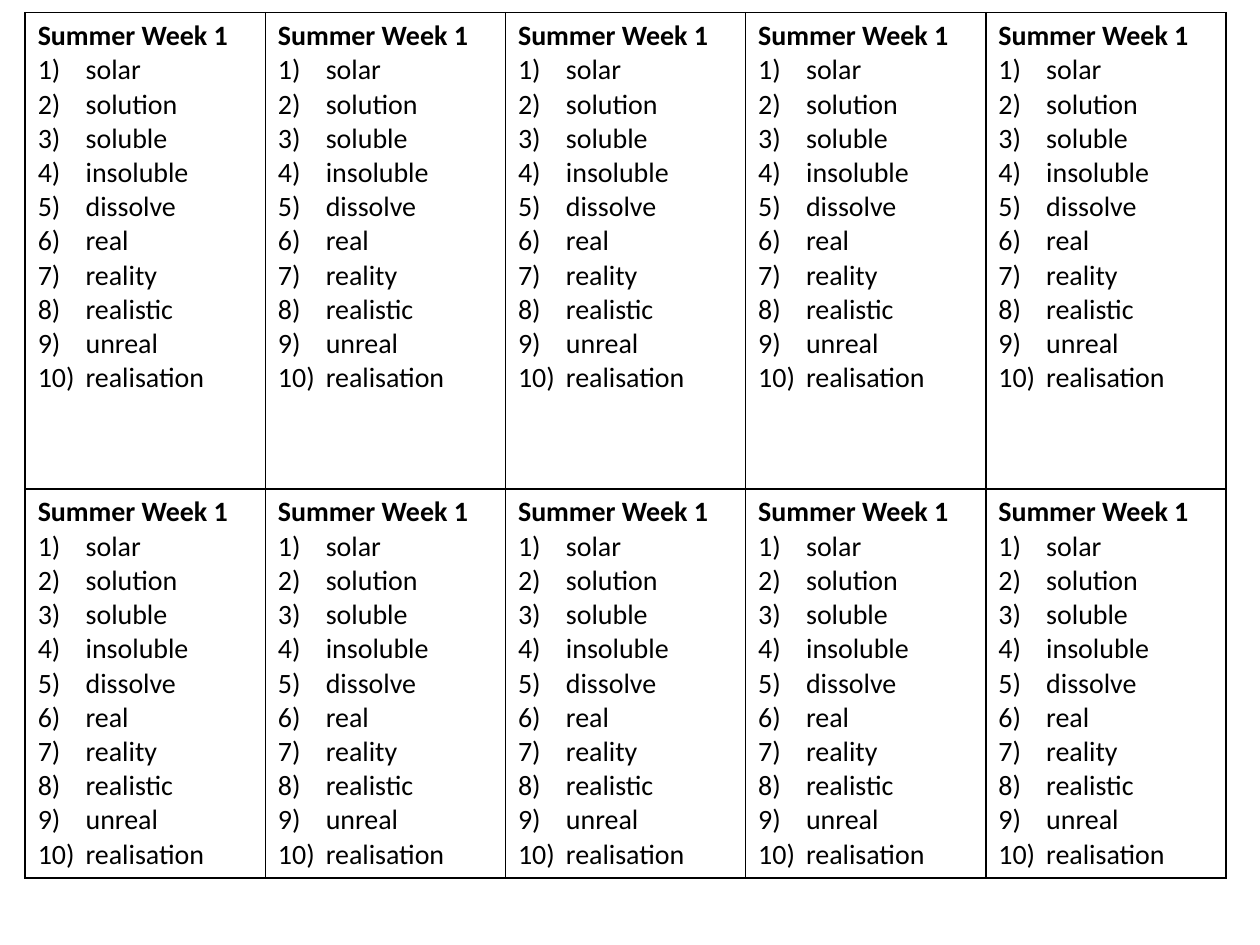
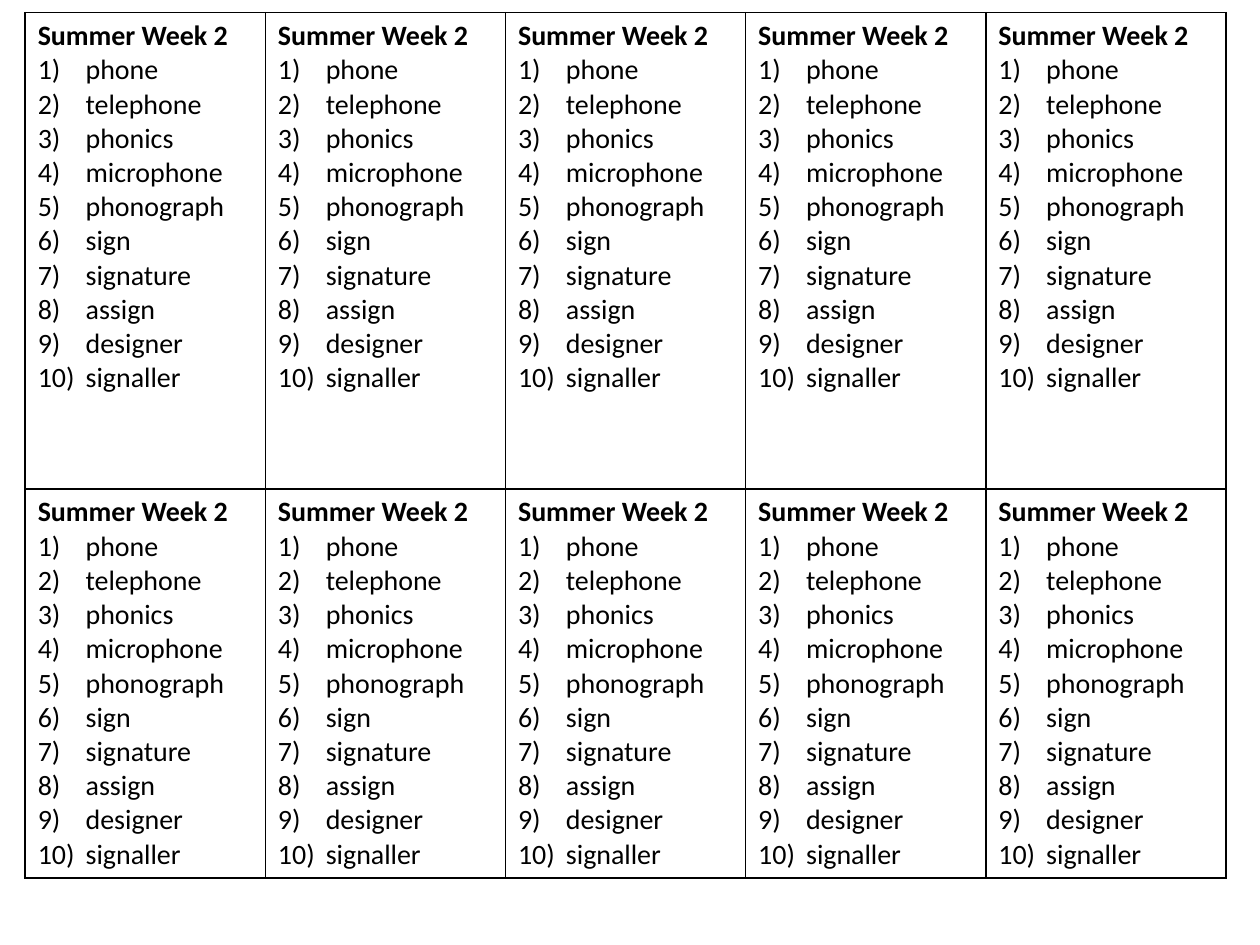
from lxml import etree
from pptx import Presentation
from pptx import util as u
from pptx.dml.color import RGBColor
from pptx.oxml.ns import qn

INK = "000000"
FONT = "Calibri"
SIZE = 16
COLS = 5
ROWS = (3.78, 3.03)
BOX = (0.2, 0.1, 9.53, sum(ROWS))
HANG = u.Inches(0.38)
WEEKS = {
    "Summer Week 1": ["solar", "solution", "soluble", "insoluble", "dissolve",
                      "real", "reality", "realistic", "unreal", "realisation"],
    "Summer Week 2": ["phone", "telephone", "phonics", "microphone", "phonograph",
                      "sign", "signature", "assign", "designer", "signaller"],
}


def tint(code):
    """Turn a hex string into a colour."""
    return RGBColor.from_string(code)


def number(para):
    """Give a paragraph an automatic number and a hanging indent."""
    props = para._p.get_or_add_pPr()
    props.set("marL", str(HANG))
    props.set("indent", str(-HANG))
    etree.SubElement(props, qn("a:buFont"), typeface="+mj-lt")
    etree.SubElement(props, qn("a:buAutoNum"), type="arabicParenR")


def frame(cell):
    """Draw a thin line on all four sides of a cell and clear its fill."""
    props = cell._tc.get_or_add_tcPr()
    for side in "LRTB":
        line = etree.SubElement(props, qn(f"a:ln{side}"), w=str(u.Pt(1)))
        fill = etree.SubElement(line, qn("a:solidFill"))
        etree.SubElement(fill, qn("a:srgbClr"), val=INK)
    cell.fill.background()


def card(cell, week, words):
    """Fill a cell with a bold heading and a numbered word list."""
    cell.text_frame.text = "\n".join([week, *words])
    for i, para in enumerate(cell.text_frame.paragraphs):
        if i:
            number(para)
        font = para.runs[0].font
        font.name, font.size, font.bold = FONT, u.Pt(SIZE), i == 0
        font.color.rgb = tint(INK)
    frame(cell)


def sheet(slide, box, week, words):
    """Place a grid of equal word cards in the given box."""
    table = slide.shapes.add_table(len(ROWS), COLS, *map(u.Inches, box)).table
    table.first_row = table.horz_banding = False
    for col in table.columns:
        col.width = u.Inches(box[2] / COLS)
    for row, high in zip(table.rows, ROWS):
        row.height = u.Inches(high)
    for cell in table.iter_cells():
        card(cell, week, words)


def main():
    """Build one sheet of cards for each week."""
    deck = Presentation()
    deck.slide_width, deck.slide_height = u.Inches(10), u.Inches(7.5)
    for week, words in WEEKS.items():
        slide = deck.slides.add_slide(deck.slide_layouts[6])
        sheet(slide, BOX, week, words)
    deck.save("out.pptx")


if __name__ == "__main__":
    main()
